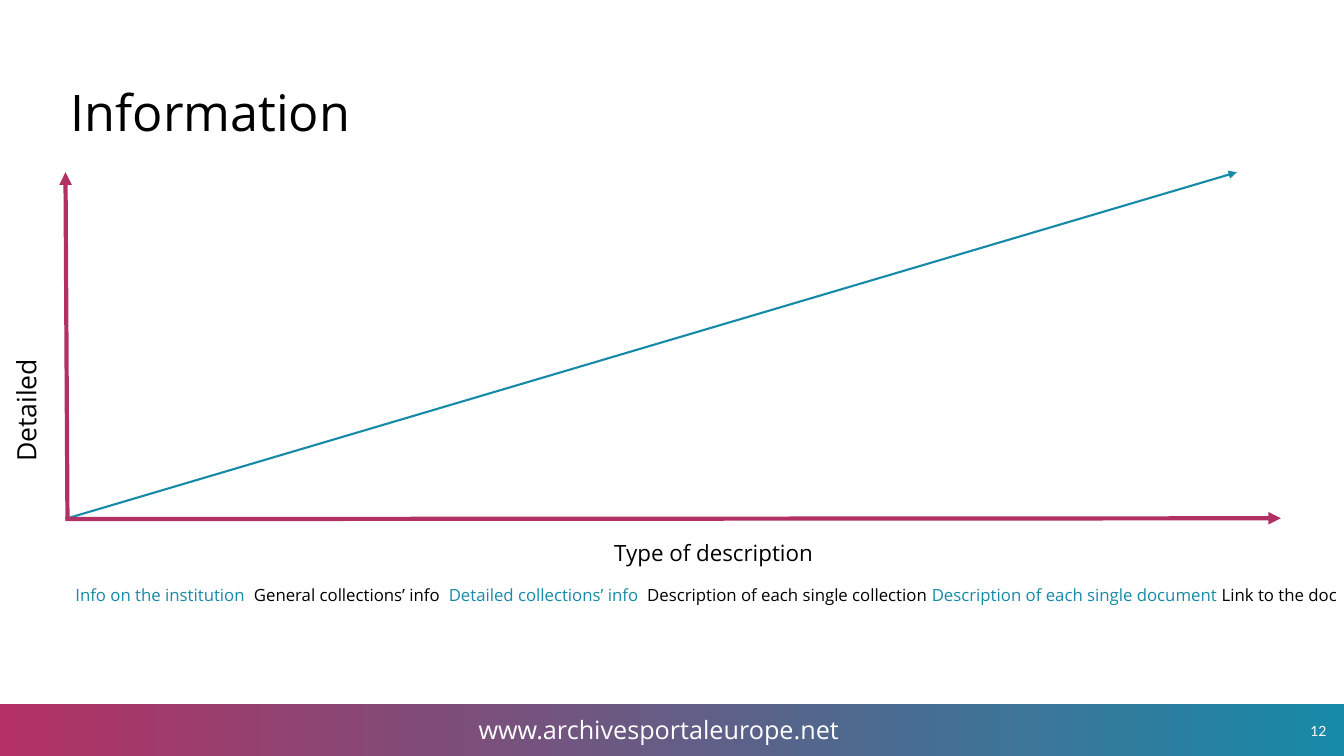
from dataclasses import dataclass

import pptx
import pptx.dml.color
import pptx.enum.shapes
import pptx.enum.text
import pptx.oxml
import pptx.oxml.ns
import pptx.util
from pptx.util import Cm

PINK, TEAL, BLACK, WHITE = "B23063", "178AA8", "000000", "FFFFFF"
ALIGN = pptx.enum.text.PP_ALIGN
ANCHOR = pptx.enum.text.MSO_ANCHOR
NS = pptx.oxml.ns.nsdecls("a")


@dataclass
class Label:
    box: tuple[float, float, float, float]
    runs: list[tuple[str, str]]
    size: float
    font: str = "Open Sans"
    align: ALIGN = ALIGN.LEFT
    anchor: ANCHOR = ANCHOR.TOP
    inset: tuple[float, float] = (0.33, 0.33)
    rotation: float = 0
    spacing: float = 1
    tabs: tuple[float, ...] = ()


@dataclass
class Arrow:
    start: tuple[float, float]
    end: tuple[float, float]
    color: str
    width: float


def rgb(color: str) -> pptx.dml.color.RGBColor:
    return pptx.dml.color.RGBColor.from_string(color)


def write_label(sp, label: Label) -> None:
    """Place a text shape and fill it run by run."""
    sp.left, sp.top, sp.width, sp.height = (Cm(v) for v in label.box)
    sp.rotation = label.rotation
    tf = sp.text_frame
    tf.word_wrap = True
    tf.auto_size = pptx.enum.text.MSO_AUTO_SIZE.NONE
    tf.vertical_anchor = label.anchor
    tf.margin_left = tf.margin_right = Cm(label.inset[0])
    tf.margin_top = tf.margin_bottom = Cm(label.inset[1])
    p = tf.paragraphs[0]
    p.alignment = label.align
    p.line_spacing = label.spacing
    if label.tabs:
        stops = "".join(f'<a:tab pos="{Cm(t)}" algn="l"/>' for t in label.tabs)
        p._p.get_or_add_pPr().append(
            pptx.oxml.parse_xml(f"<a:tabLst {NS}>{stops}</a:tabLst>"))
    for text, color in label.runs:
        r = p.add_run()
        r.text = text
        r.font.name = label.font
        r.font.size = pptx.util.Pt(label.size)
        r.font.color.rgb = rgb(color)


def add_label(s, label: Label) -> None:
    write_label(s.shapes.add_textbox(0, 0, 0, 0), label)


def add_arrow(s, arrow: Arrow) -> None:
    cx = s.shapes.add_connector(
        pptx.enum.shapes.MSO_CONNECTOR.STRAIGHT,
        *(Cm(v) for v in arrow.start + arrow.end))
    cx.line.color.rgb = rgb(arrow.color)
    cx.line.width = pptx.util.Pt(arrow.width)
    cx.line._get_or_add_ln().append(
        pptx.oxml.parse_xml(f'<a:tailEnd {NS} type="triangle"/>'))
    cx._element.spPr.append(pptx.oxml.parse_xml(f"<a:effectLst {NS}/>"))


def add_footer_bar(s) -> None:
    sp = s.shapes.add_shape(pptx.enum.shapes.MSO_SHAPE.RECTANGLE,
                            Cm(-0.03), Cm(17.75), Cm(33.96), Cm(1.3))
    sp.shadow.inherit = False
    sp.line.fill.background()
    sp.fill.gradient()
    sp.fill.gradient_angle = 0
    for stop, color in zip(sp.fill.gradient_stops, (PINK, TEAL)):
        stop.color.rgb = rgb(color)


TITLE = Label((1.45, 1.5, 31.55, 2.11), [("Information", BLACK)], 36, spacing=1.14)

FOOTER = [
    Label((32.69, 18.01, 1.07, 0.84), [("12", WHITE)], 10, "Lato",
          ALIGN.CENTER, ANCHOR.MIDDLE, (0.25, 0.13)),
    Label((11.81, 17.88, 11.46, 1.02), [("www.archivesportaleurope.net", WHITE)],
          18, inset=(0.25, 0.13)),
]

AXIS_LABELS = [
    Label((-3.23, 7.47, 7.65, 1.35), [("Detailed", BLACK)], 19, rotation=270),
    Label((3.81, 13.26, 28.35, 1.35), [("Type of description", BLACK)], 16,
          align=ALIGN.CENTER),
]

ARROWS = [
    Arrow((1.7, 13.08), (1.65, 4.34), PINK, 3),
    Arrow((1.7, 13.06), (31.17, 4.34), TEAL, 1.5),
    Arrow((1.65, 13.08), (32.28, 13.06), PINK, 3),
]

LEVELS = Label(
    (1.65, 14.6, 32.49, 0.76),
    [("Info on the institution", TEAL),
     ("\tGeneral collections’ info\t", BLACK),
     ("Detailed collections’ info", TEAL),
     ("\tDescription of each single collection ", BLACK),
     ("Description of each single document ", TEAL),
     ("Link to the doc", BLACK)],
    12, inset=(0.25, 0.13), tabs=(4.5, 9.41, 14.41))


def main() -> None:
    prs = pptx.Presentation()
    prs.slide_width, prs.slide_height = Cm(33.87), Cm(19.05)
    s = prs.slides.add_slide(prs.slide_layouts[5])

    # Title
    write_label(s.shapes.title, TITLE)

    # Footer
    add_footer_bar(s)
    for label in FOOTER:
        add_label(s, label)

    # Axes and rising line
    for label in AXIS_LABELS:
        add_label(s, label)
    for arrow in ARROWS:
        add_arrow(s, arrow)

    # Levels of description
    add_label(s, LEVELS)

    prs.save("out.pptx")


if __name__ == "__main__":
    main()
